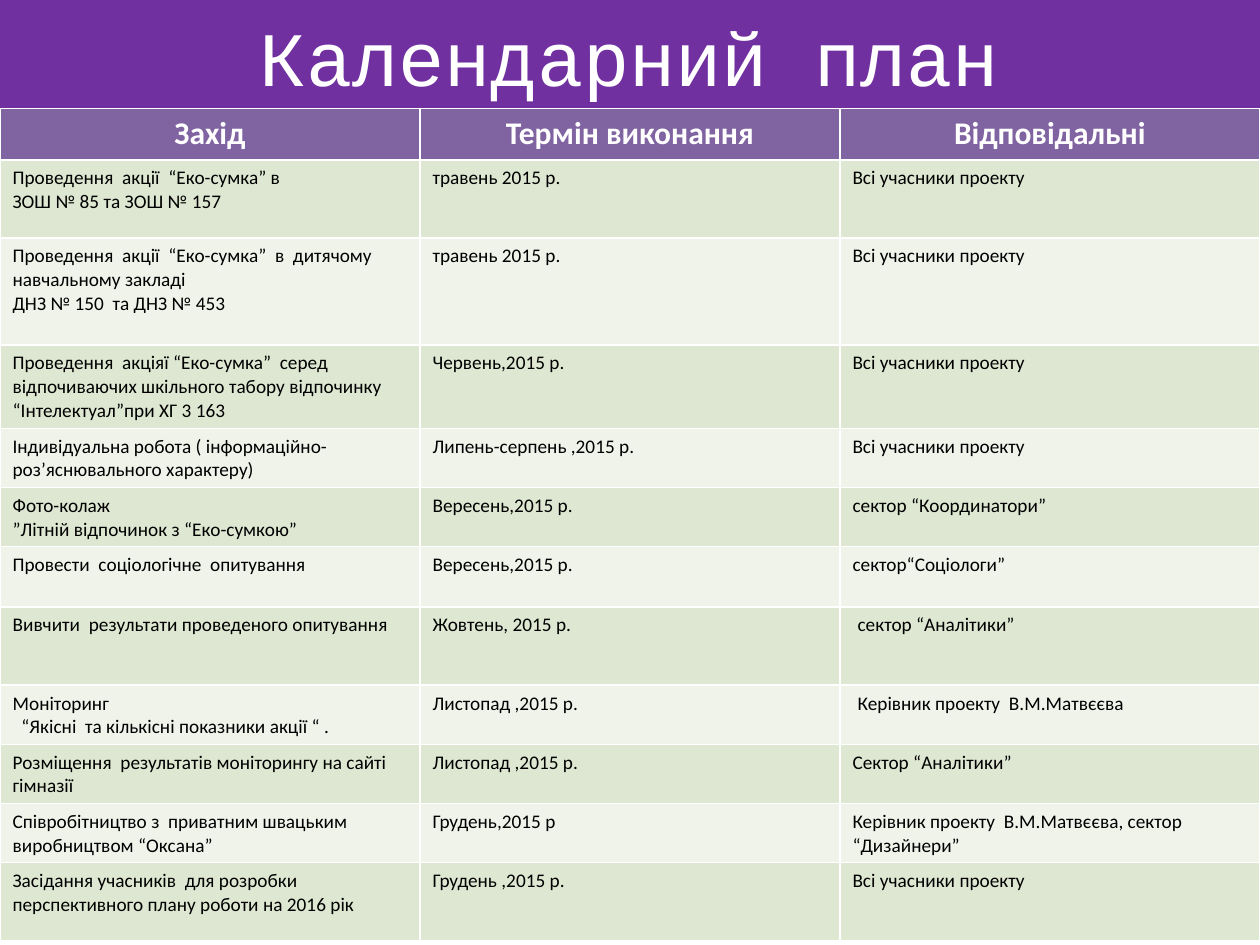
import pptx
import pptx.dml.color
import pptx.enum.shapes
import pptx.enum.text
import pptx.util

Inches = pptx.util.Inches
ALIGN = pptx.enum.text.PP_ALIGN
MIDDLE = pptx.enum.text.MSO_ANCHOR.MIDDLE

HEADINGS = ["Захід", "Термін виконання", "Відповідальні"]
EVERYONE = "Всі учасники проекту"

# Row height, activity paragraphs, deadline, people responsible.
# A paragraph is a text, or a text with its left indent in inches.
PLAN = [
    (0.62, ["Проведення  акції  “Еко-сумка” в", "ЗОШ № 85 та ЗОШ № 157"],
     "травень 2015 р.", EVERYONE),
    (0.85, ["Проведення  акції  “Еко-сумка”  в  дитячому  навчальному закладі",
            "ДНЗ № 150  та ДНЗ № 453"],
     "травень 2015 р.", EVERYONE),
    (0.66, ["Проведення  акціяї “Еко-сумка”  серед відпочиваючих шкільного "
            "табору відпочинку “Інтелектуал”при ХГ 3 163"],
     "Червень,2015 р.", EVERYONE),
    (0.47, ["Індивідуальна робота ( інформаційно-роз’яснювального характеру)"],
     "Липень-серпень ,2015 р.", EVERYONE),
    (0.47, ["Фото-колаж", "”Літній відпочинок з “Еко-сумкою”"],
     "Вересень,2015 р.", "сектор “Координатори”"),
    (0.48, ["Провести  соціологічне  опитування"],
     "Вересень,2015 р.", "сектор“Соціологи”"),
    (0.62, ["Вивчити  результати проведеного опитування"],
     "Жовтень, 2015 р.", ("сектор “Аналітики”", 0.04)),
    (0.47, ["Моніторинг", ("“Якісні  та кількісні показники акції “ .", 0.07)],
     "Листопад ,2015 р.", ("Керівник проекту  В.М.Матвєєва", 0.04)),
    (0.47, ["Розміщення  результатів моніторингу на сайті  гімназії"],
     "Листопад ,2015 р.", "Сектор “Аналітики”"),
    (0.47, ["Співробітництво з  приватним швацьким виробництвом “Оксана”"],
     "Грудень,2015 р", "Керівник проекту  В.М.Матвєєва, сектор “Дизайнери”"),
    (0.62, ["Засідання учасників  для розробки перспективного плану роботи на 2016 рік"],
     "Грудень ,2015 р.", EVERYONE),
]


def rgb(hex_code):
    return pptx.dml.color.RGBColor.from_string(hex_code)


class PlanSlide:
    body_font, title_font = "Calibri", "Courier New"
    banner, header = "7030A0", "8064A2"
    bands = ["DEE7D1", "EFF3EA"]
    light, dark = "FFFFFF", "000000"

    def __init__(self, slide):
        self.slide = slide

    def paint(self, target, color):
        target.fill.solid()
        target.fill.fore_color.rgb = rgb(color)

    def add_text(self, frame, paragraphs, size, color, font=body_font,
                 bold=False, align=ALIGN.LEFT):
        frame.word_wrap = True
        for index, entry in enumerate(paragraphs):
            text, indent = (entry, 0) if isinstance(entry, str) else entry
            paragraph = frame.add_paragraph() if index else frame.paragraphs[0]
            paragraph.alignment = align
            if indent:
                properties = paragraph._p.get_or_add_pPr()
                properties.set("marL", str(Inches(indent)))
                properties.set("indent", "0")
            run = paragraph.add_run()
            run.text = text
            run.font.name = font
            run.font.size = pptx.util.Pt(size)
            run.font.bold = bold
            run.font.color.rgb = rgb(color)

    def add_banner(self, width, height):
        banner = self.slide.shapes.add_shape(
            pptx.enum.shapes.MSO_SHAPE.RECTANGLE, 0, 0, Inches(width), Inches(height))
        banner.shadow.inherit = False
        self.paint(banner, self.banner)
        banner.line.fill.background()

    def add_title(self, text, left, top, width, height):
        title = self.slide.shapes.add_textbox(
            Inches(left), Inches(top), Inches(width), Inches(height))
        title.text_frame.vertical_anchor = MIDDLE
        self.add_text(title.text_frame, [text], 44, self.light,
                      font=self.title_font, align=ALIGN.CENTER)

    def add_plan(self, headings, plan, top, width, header_height):
        heights = [header_height] + [row[0] for row in plan]
        table = self.slide.shapes.add_table(
            len(heights), len(headings), 0, Inches(top),
            Inches(width), Inches(sum(heights))).table
        for row, height in zip(table.rows, heights):
            row.height = Inches(height)
        for column, heading in enumerate(headings):
            cell = table.cell(0, column)
            self.paint(cell, self.header)
            self.add_text(cell.text_frame, [heading], 18, self.light,
                          bold=True, align=ALIGN.CENTER)
        for row, (_, activity, deadline, people) in enumerate(plan, start=1):
            for column, paragraphs in enumerate([activity, [deadline], [people]]):
                cell = table.cell(row, column)
                self.paint(cell, self.bands[(row - 1) % 2])
                self.add_text(cell.text_frame, paragraphs, 11, self.dark)


def main():
    deck = pptx.Presentation()
    deck.slide_width, deck.slide_height = Inches(10), Inches(7.5)
    page = PlanSlide(deck.slides.add_slide(deck.slide_layouts[6]))
    page.add_banner(10, 0.86)
    page.add_title("Календарний план", 0.5, 0, 9, 0.89)
    page.add_plan(HEADINGS, PLAN, top=0.86, width=10, header_height=0.41)
    deck.save("out.pptx")


if __name__ == "__main__":
    main()
